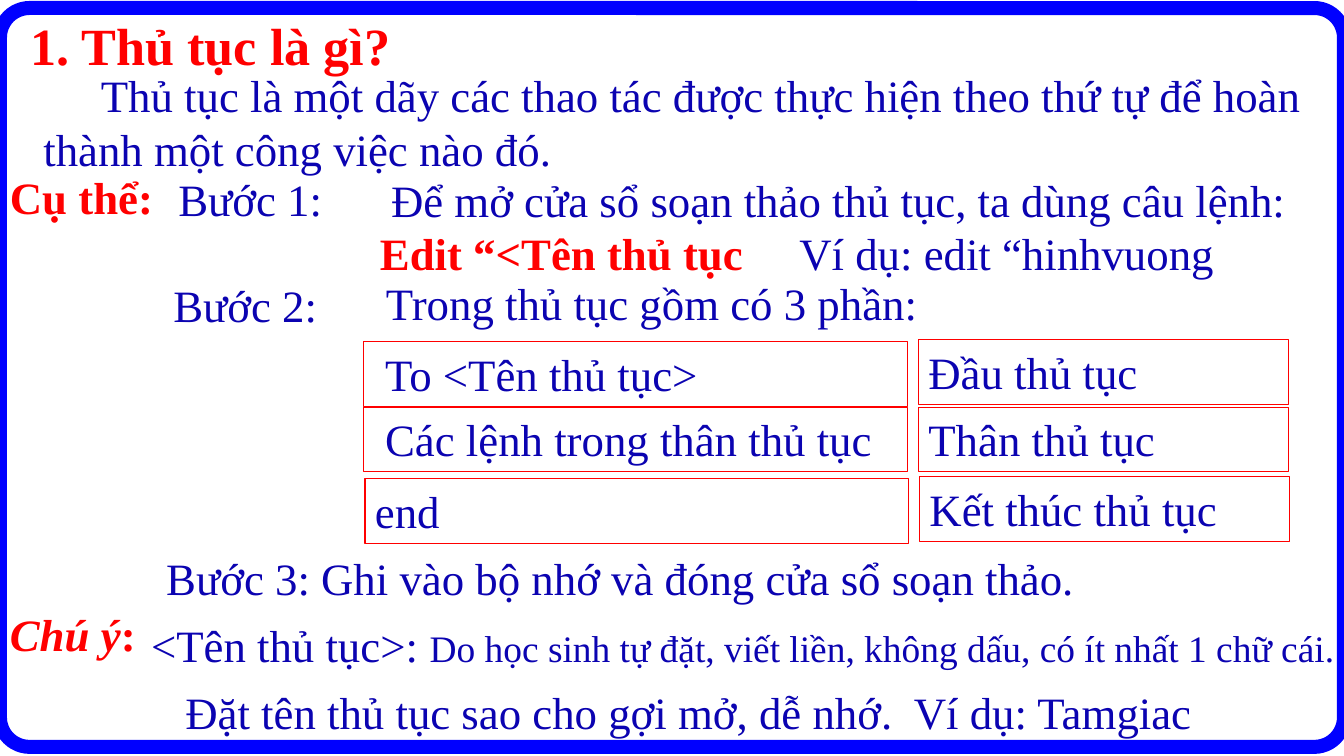
from pptx import Presentation
from pptx import util as u
from pptx.dml.color import RGBColor
from pptx.enum import shapes, text
from pptx.oxml import xmlchemy as xml

RED = RGBColor(0xFF, 0x00, 0x00)
NAVY = RGBColor(0x0B, 0x03, 0xB1)
BLUE = RGBColor(0x00, 0x00, 0xFF)
FONT = "Times New Roman"
SLIDE_WIDTH, SLIDE_HEIGHT = 13.33, 7.5
LINE_HEIGHT = 0.64
INSET = 0.1

TITLE = "1. Thủ tục là gì?"
DEFINITION = ("Thủ tục là một dãy các thao tác được thực hiện theo thứ tự "
              "để hoàn thành một công việc nào đó.")

PLAIN = {}
HEADING = {"color": RED, "bold": True}
SMALL = {"size": 26.7}

LINES = [
    (0, 1.63, [("Cụ thể:", HEADING)]),
    (1.67, 1.65, [("Bước 1:", PLAIN)]),
    (3.78, 1.66, [("Để mở cửa sổ soạn thảo thủ tục, ta dùng câu lệnh:", PLAIN)]),
    (3.67, 2.19, [("Edit “<Tên thủ tục", HEADING)]),
    (7.83, 2.19, [("Ví dụ: edit “hinhvuong", PLAIN)]),
    (1.62, 2.71, [("Bước 2:", PLAIN)]),
    (3.73, 2.69, [("Trong thủ tục gồm có 3 phần:", PLAIN)]),
    (1.55, 5.41, [("Bước 3: Ghi vào bộ nhớ và đóng cửa sổ soạn thảo.", PLAIN)]),
    (1.4, 6.08, [("<Tên thủ tục>: ", PLAIN),
                 ("Do học sinh tự đặt, viết liền, không dấu, có ít nhất 1 chữ cái.", SMALL)]),
    (0, 5.97, [("Chú ý", {**HEADING, "italic": True}), (":", HEADING)]),
    (1.74, 6.74, [("Đặt tên thủ tục sao cho gợi mở, dễ nhớ.  Ví dụ: Tamgiac", PLAIN)]),
]

PARTS = [
    (3.61, 3.39, 5.39, 0.21, "To <Tên thủ tục>"),
    (9.11, 3.37, 3.67, INSET, "Đầu thủ tục"),
    (3.61, 4.04, 5.39, 0.21, "Các lệnh trong thân thủ tục"),
    (9.11, 4.04, 3.67, INSET, "Thân thủ tục"),
    (3.62, 4.75, 5.39, INSET, "end"),
    (9.12, 4.73, 3.67, INSET, "Kết thúc thủ tục"),
]


def place(box, left, top, width, height):
    box.left, box.top = u.Inches(left), u.Inches(top)
    box.width, box.height = u.Inches(width), u.Inches(height)


def write(box, spans, inset=INSET):
    frame = box.text_frame
    frame.word_wrap = True
    frame.auto_size = text.MSO_AUTO_SIZE.NONE
    frame.vertical_anchor = text.MSO_ANCHOR.TOP
    frame.margin_left, frame.margin_right = u.Inches(inset), 0
    frame.margin_top = frame.margin_bottom = u.Inches(0.05)
    para = frame.paragraphs[0]
    para.alignment = text.PP_ALIGN.LEFT
    para.space_before = u.Pt(0)
    for words, style in spans:
        span = para.add_run()
        span.text = words
        span.font.name = FONT
        span.font.size = u.Pt(style.get("size", 32))
        span.font.bold = style.get("bold", False)
        span.font.italic = style.get("italic", False)
        span.font.color.rgb = style.get("color", NAVY)
    return para


def add_outline(page, kind, left, top, width, height, color, weight):
    box = page.shapes.add_shape(kind, 0, 0, 0, 0)
    place(box, left, top, width, height)
    box.shadow.inherit = False
    box.fill.background()
    box.line.color.rgb = color
    box.line.width = u.Pt(weight)
    return box


def main():
    deck = Presentation()
    deck.slide_width, deck.slide_height = u.Inches(SLIDE_WIDTH), u.Inches(SLIDE_HEIGHT)
    page = deck.slides.add_slide(deck.slide_layouts[1])

    border = add_outline(page, shapes.MSO_SHAPE.ROUNDED_RECTANGLE,
                         0, 0.08, SLIDE_WIDTH, 7.33, BLUE, 10)
    border.adjustments[0] = 0.04

    title = page.shapes.title
    place(title, 0.2, 0.08, 13, 0.73)
    write(title, [(TITLE, {**HEADING, "size": 37.3})])

    definition = page.placeholders[1]
    place(definition, 0.33, 0.62, 13, 1.18)
    para = write(definition, [(DEFINITION, PLAIN)])
    settings = para._p.get_or_add_pPr()
    settings.set("marL", "0")
    settings.set("indent", str(u.Inches(0.57)))
    settings.append(xml.OxmlElement("a:buNone"))

    for left, top, spans in LINES:
        box = page.shapes.add_textbox(0, 0, 0, 0)
        place(box, left, top, SLIDE_WIDTH - left, LINE_HEIGHT)
        write(box, spans)

    for left, top, width, inset, words in PARTS:
        box = add_outline(page, shapes.MSO_SHAPE.RECTANGLE,
                          left, top, width, LINE_HEIGHT, RED, 0.75)
        write(box, [(words, PLAIN)], inset)

    deck.save("out.pptx")


if __name__ == "__main__":
    main()
